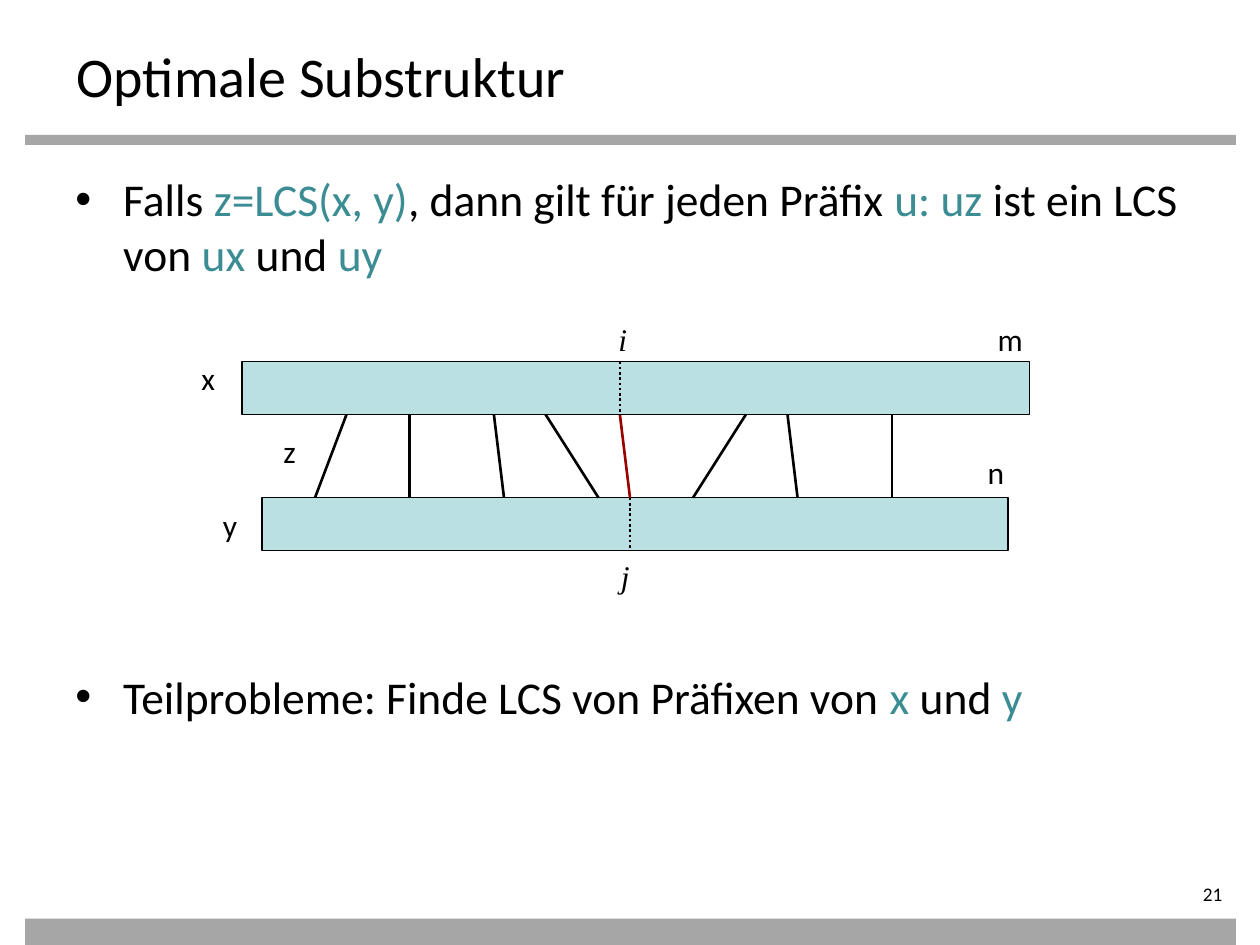
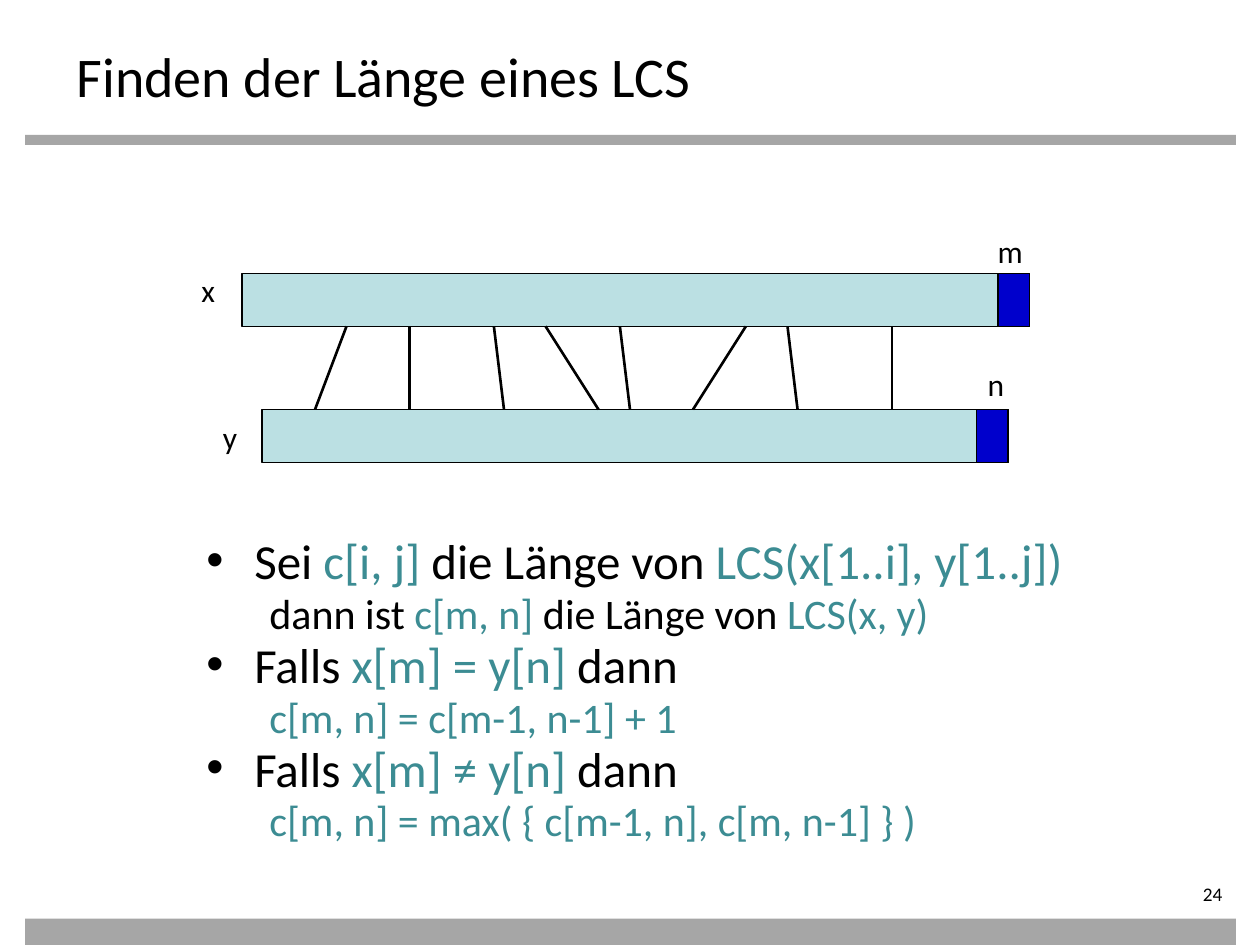
from lxml import etree
from pptx import Presentation
from pptx import util as u
from pptx.dml import color
from pptx.enum import dml, shapes, text
from pptx.oxml import ns

BLACK, TEAL, RED = "000000", "3C8C93", "990000"
GREY, PALE, BLUE = "A6A6A6", "BBE0E3", "0000CC"
SANS, SERIF = "Calibri", "Times New Roman"

BAR_HEIGHT, ROW_GAP = 0.42, 1.08
X_LEFT, X_WIDTH = 1.92, 6.25
Y_LEFT, Y_WIDTH = 2.08, 5.92
I_POSITION, J_POSITION = 4.92, 5
MATCHES = [(2.75, 2.5), (3.25, 3.25), (3.92, 4), (4.33, 4.75),
           (I_POSITION, J_POSITION), (5.92, 5.5), (6.25, 6.33), (7.08, 7.08)]


def rgb(value):
    """Turn a hex string into a colour."""
    return color.RGBColor.from_string(value)


class Deck:
    """Hold the shared style and the slide being drawn."""

    def __init__(self):
        """Start an empty 10 by 7.5 inch presentation."""
        self.presentation = Presentation()
        self.presentation.slide_width = u.Inches(10)
        self.presentation.slide_height = u.Inches(7.5)

    def start_slide(self, heading, number):
        """Add a slide with bands, heading and page number."""
        blank = self.presentation.slide_layouts[6]
        self.slide = self.presentation.slides.add_slide(blank)
        self.bar(0.2, 1.07, 9.61, 0.08, GREY, None)
        self.bar(0.2, 7.29, 9.61, 0.21, GREY, None)
        self.label(heading, 0.51, 0.28, 9, 0.55, size=32)
        page = self.label(str(number), 8.7, 7, 1.1, 0.22, size=11)
        page.margin_left = page.margin_top = page.margin_bottom = 0
        page.paragraphs[0].alignment = text.PP_ALIGN.RIGHT

    def bar(self, left, top, width, height, fill, outline=BLACK):
        """Draw a filled rectangle."""
        rectangle = self.slide.shapes.add_shape(
            shapes.MSO_SHAPE.RECTANGLE, *map(u.Inches, (left, top, width, height)))
        rectangle.shadow.inherit = False
        rectangle.fill.solid()
        rectangle.fill.fore_color.rgb = rgb(fill)
        if outline:
            rectangle.line.color.rgb = rgb(outline)
            rectangle.line.width = u.Pt(0.75)
        else:
            rectangle.line.fill.background()

    def line(self, start, end, ink=BLACK, dotted=False):
        """Draw a straight line between two points."""
        stroke = self.slide.shapes.add_connector(
            shapes.MSO_CONNECTOR.STRAIGHT, *map(u.Inches, (*start, *end)))
        stroke.line.color.rgb = rgb(ink)
        stroke.line.width = u.Pt(1.5)
        if dotted:
            stroke.line.dash_style = dml.MSO_LINE.ROUND_DOT
        etree.SubElement(stroke._element.spPr, ns.qn("a:effectLst"))

    def frame(self, left, top, width, height):
        """Add an empty wrapping text frame."""
        box = self.slide.shapes.add_textbox(*map(u.Inches, (left, top, width, height)))
        box.text_frame.word_wrap = True
        return box.text_frame

    def style(self, font, size, ink=BLACK, face=SANS):
        """Set size, colour and typeface of a font."""
        font.size, font.name = u.Pt(size), face
        font.color.rgb = rgb(ink)

    def label(self, words, left, top, width, height, size=18, face=SANS):
        """Write one line in a single style."""
        frame = self.frame(left, top, width, height)
        frame.text = words
        self.style(frame.paragraphs[0].runs[0].font, size, face=face)
        return frame

    def tag(self, letter, left, top, width=0.33, index=False):
        """Write a letter that names a part of the diagram."""
        frame = self.label(letter, left, top, width, 0.4, face=SERIF if index else SANS)
        frame.word_wrap = False
        frame.auto_size = text.MSO_AUTO_SIZE.SHAPE_TO_FIT_TEXT
        frame.paragraphs[0].runs[0].font.italic = index or None

    def body(self, place, items, spacing=None):
        """Write (words, size, bulleted, space before); |bars| enclose formulas."""
        frame = self.frame(*place)
        for position, (words, size, bulleted, before) in enumerate(items):
            paragraph = frame.add_paragraph() if position else frame.paragraphs[0]
            margin, indent = (0.38, -0.38) if bulleted else (0.81, -0.31)
            properties = paragraph._p.get_or_add_pPr()
            properties.set("marL", str(u.Inches(margin)))
            properties.set("indent", str(u.Inches(indent)))
            if bulleted:
                etree.SubElement(properties, ns.qn("a:buFont"), typeface="Arial")
                etree.SubElement(properties, ns.qn("a:buChar"), char="•")
            else:
                etree.SubElement(properties, ns.qn("a:buNone"))
            paragraph.line_spacing = spacing
            if position:
                paragraph.space_before = u.Pt(before)
            for order, part in enumerate(words.split("|")):
                if part:
                    run = paragraph.add_run()
                    run.text = part
                    self.style(run.font, size, TEAL if order % 2 else BLACK)

    def alignment(self, top, pair_ink=BLACK, tail=0):
        """Draw both sequences with their matches and optional last symbols."""
        rows = [(X_LEFT, top, X_WIDTH), (Y_LEFT, top + ROW_GAP, Y_WIDTH)]
        for left, row_top, width in rows:
            self.bar(left, row_top, width, BAR_HEIGHT, PALE)
            if tail:
                self.bar(left + width - tail, row_top, tail, BAR_HEIGHT, BLUE)
        self.tag("x", 1.5, top - 0.07)
        self.tag("y", 1.67, top + 1.1)
        self.tag("m", 7.82, top - 0.38, 0.41)
        self.tag("n", 7.74, top + 0.68, 0.34)
        for upper, lower in MATCHES:
            ink = pair_ink if upper == I_POSITION else BLACK
            self.line((upper, top + BAR_HEIGHT), (lower, top + ROW_GAP), ink)

    def prefix_marks(self, top):
        """Mark the prefix ends i and j and the subsequence z."""
        self.tag("z", 2.15, top + 0.51)
        for position, row_top in ((I_POSITION, top), (J_POSITION, top + ROW_GAP)):
            self.line((position, row_top), (position, row_top + BAR_HEIGHT), dotted=True)
        self.tag("i", 4.81, top - 0.38, 0.27, index=True)
        self.tag("j", 4.83, top + 1.5, 0.27, index=True)


def main():
    """Build both slides and save them."""
    deck = Deck()

    deck.start_slide("Optimale Substruktur", 21)
    deck.body((0.5, 1.31, 9, 5.43), [
        ("Falls |z=LCS(x, y)|, dann gilt für jeden Präfix |u: uz| ist ein LCS von "
         "|ux| und |uy|", 26, True, 0),
        ("Teilprobleme: Finde LCS von Präfixen von |x| und |y|", 26, True, 222),
    ])
    deck.alignment(2.87, pair_ink=RED)
    deck.prefix_marks(2.87)

    deck.start_slide("Finden der Länge eines LCS", 24)
    cases = [
        ("Sei |c[i, j]| die Länge von |LCS(x[1..i], y[1..j])|",
         "dann ist |c[m, n]| die Länge von |LCS(x, y)|"),
        ("Falls |x[m] = y[n]| dann", "|c[m, n] = c[m-1, n-1] + 1|"),
        ("Falls |x[m] ≠ y[n]| dann", "|c[m, n] = max( { c[m-1, n], c[m, n-1] } )|"),
    ]
    deck.body((1.54, 4.25, 8.13, 2.83), [
        item for case, result in cases
        for item in ((case, 28, True, 4.7), (result, 24, False, 4.7))
    ], spacing=0.8)
    deck.alignment(2.17, tail=0.25)

    deck.presentation.save("out.pptx")


if __name__ == "__main__":
    main()
